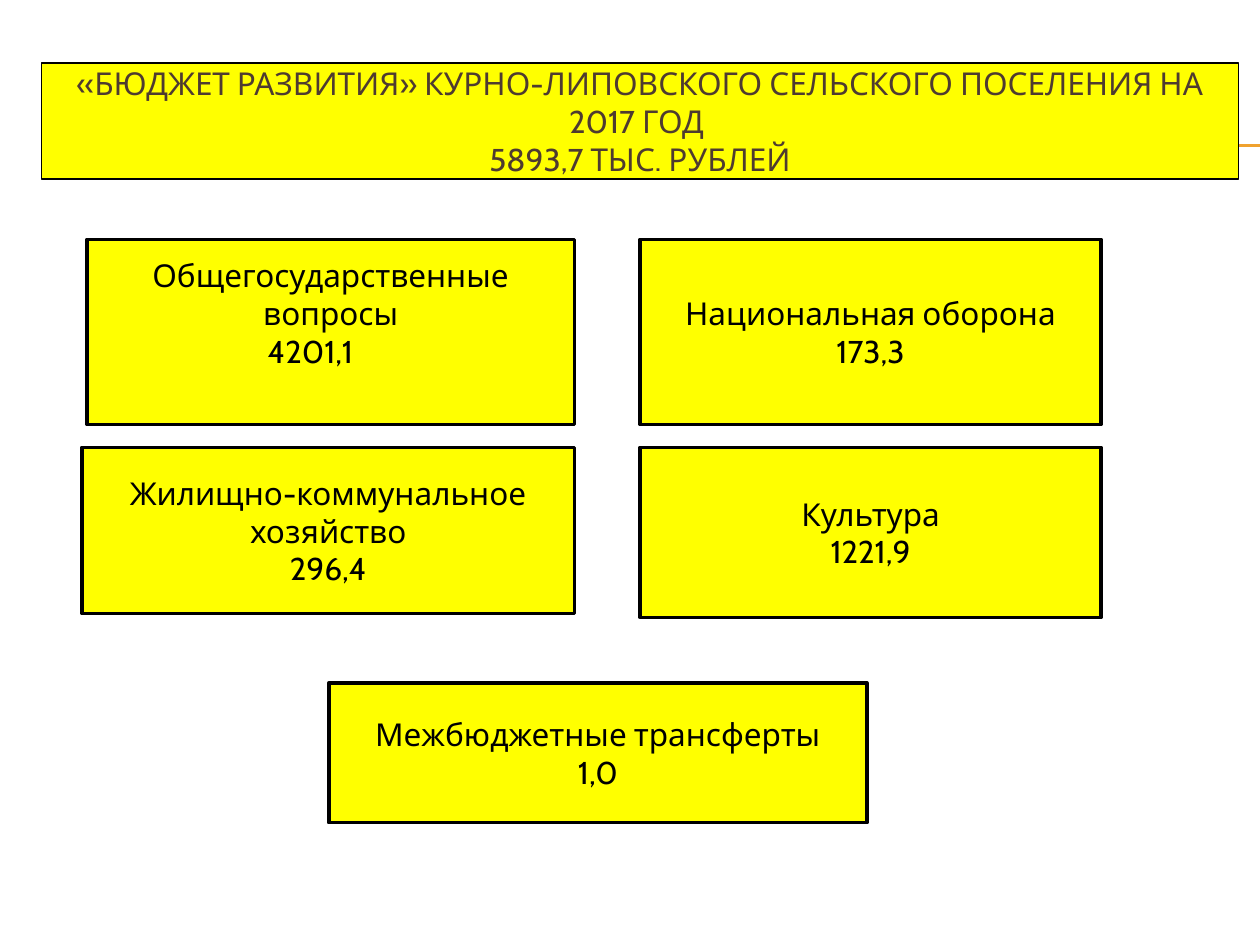
"""Build the settlement's development budget slide on a 100 by 75 grid."""
from dataclasses import dataclass

from lxml import etree
from pptx import Presentation
from pptx import util as u
from pptx.dml.color import RGBColor
from pptx.enum import shapes, text
from pptx.oxml.ns import qn

WIDTH, HEIGHT = u.Inches(10), u.Inches(7.5)
COLUMN, ROW = WIDTH // 100, HEIGHT // 75
TOP_ROW, MIDDLE_ROW, BOTTOM_ROW = 19, 35.5, 54.2
RIGHT_COLUMN, RIGHT_SPAN, TOP_SPAN = 50.8, 36.6, 14.7


@dataclass(frozen=True)
class Theme:
    """Colours, font and sizes of the slide."""
    panel: RGBColor = RGBColor(0xFF, 0xFF, 0x00)
    ink: RGBColor = RGBColor(0x00, 0x00, 0x00)
    title: RGBColor = RGBColor(0x4E, 0x3B, 0x30)
    rule: RGBColor = RGBColor(0xF0, 0xA2, 0x2E)
    font: str = "Cabin"
    size: float = 18
    thin: float = 0.75
    thick: float = 2


THEME = Theme()
TITLE = ("«БЮДЖЕТ РАЗВИТИЯ» КУРНО-ЛИПОВСКОГО СЕЛЬСКОГО ПОСЕЛЕНИЯ НА 2017 ГОД "
         "\v5893,7 ТЫС. РУБЛЕЙ")


def place(column, row):
    """Turn grid units into slide lengths."""
    return u.Emu(round(column * COLUMN)), u.Emu(round(row * ROW))


def write(frame, lines, *, color=THEME.ink, size=THEME.size, font=THEME.font):
    """Write centred paragraphs into a text frame."""
    frame.word_wrap = True
    frame.vertical_anchor = text.MSO_ANCHOR.MIDDLE
    for index, line in enumerate(lines):
        paragraph = frame.add_paragraph() if index else frame.paragraphs[0]
        paragraph.text = line
        paragraph.alignment = text.PP_ALIGN.CENTER
        for run in paragraph.runs:
            run.font.name = font
            run.font.size = u.Pt(size)
            run.font.color.rgb = color


def add_panel(slide, position, span, lines, *, line=THEME.thick, **style):
    """Add a filled and outlined rectangle with text."""
    shape = slide.shapes.add_shape(
        shapes.MSO_SHAPE.RECTANGLE, *place(*position), *place(*span))
    shape.shadow.inherit = False
    shape.fill.solid()
    shape.fill.fore_color.rgb = THEME.panel
    shape.line.color.rgb = THEME.ink
    shape.line.width = u.Pt(line)
    write(shape.text_frame, lines, **style)
    return shape


def add_rule(slide, row):
    """Add a thin rule that runs to the right edge."""
    rule = slide.shapes.add_connector(
        shapes.MSO_CONNECTOR.STRAIGHT, *place(5.6, row), *place(100, row))
    rule.line.color.rgb = THEME.rule
    rule.line.width = u.Pt(THEME.thin)
    etree.SubElement(rule._element.spPr, qn("a:effectLst"))


def main():
    """Build and save the slide."""
    presentation = Presentation()
    presentation.slide_width, presentation.slide_height = WIDTH, HEIGHT
    slide = presentation.slides.add_slide(presentation.slide_layouts[6])

    for row in (11.5, 11.6):
        add_rule(slide, row)
    add_panel(slide, (3.3, 5), (95, 9.2), [TITLE],
              line=THEME.thin, color=THEME.title)

    general = add_panel(slide, (6.9, TOP_ROW), (38.7, TOP_SPAN),
                        ["Общегосударственные вопросы", "4201,1\t"])
    general.text_frame.margin_bottom = u.Inches(0.35)
    add_panel(slide, (6.5, MIDDLE_ROW), (39.1, 13.2),
              ["Жилищно-коммунальное хозяйство", "296,4"])
    add_panel(slide, (RIGHT_COLUMN, TOP_ROW), (RIGHT_SPAN, TOP_SPAN),
              ["Национальная оборона", "173,3"])
    add_panel(slide, (RIGHT_COLUMN, MIDDLE_ROW), (RIGHT_SPAN, 13.5),
              ["Культура", "1221,9"])
    add_panel(slide, (26.1, BOTTOM_ROW), (42.7, 11.1),
              ["Межбюджетные трансферты", "1,0"])

    presentation.save("out.pptx")


if __name__ == "__main__":
    main()
